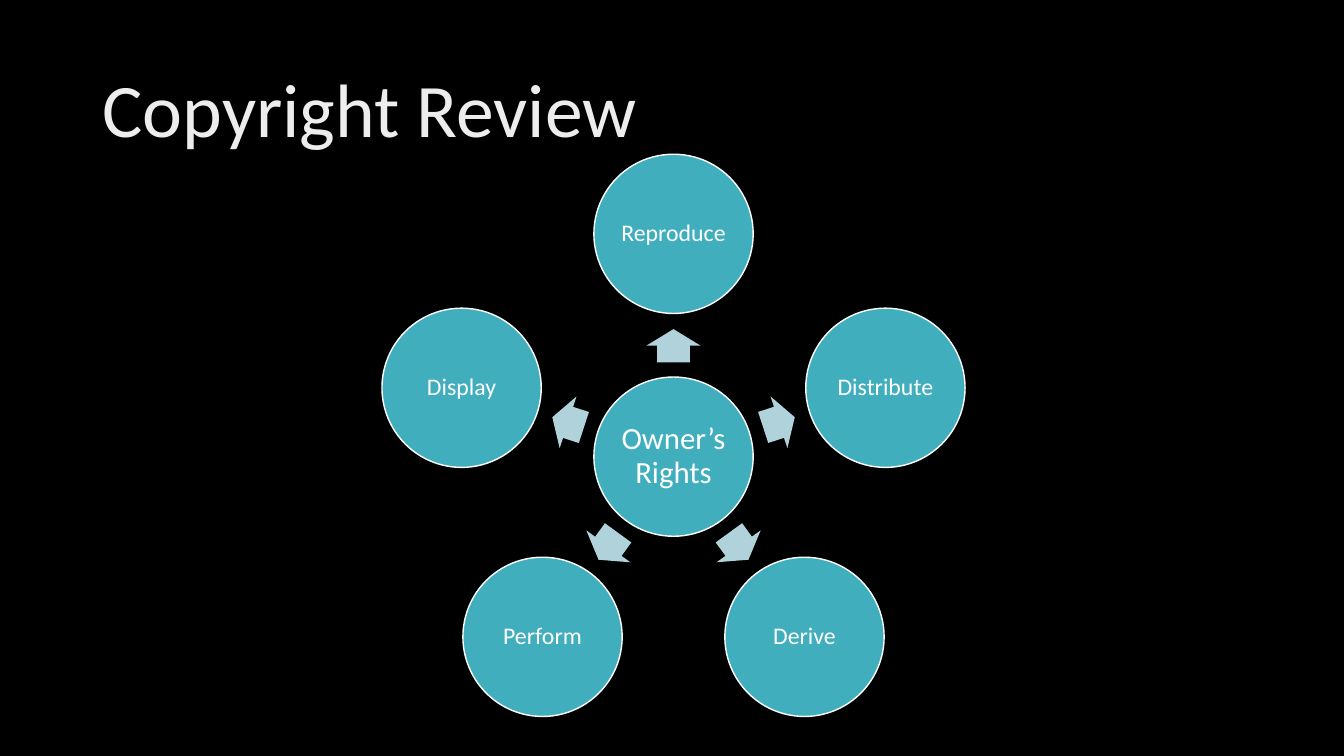
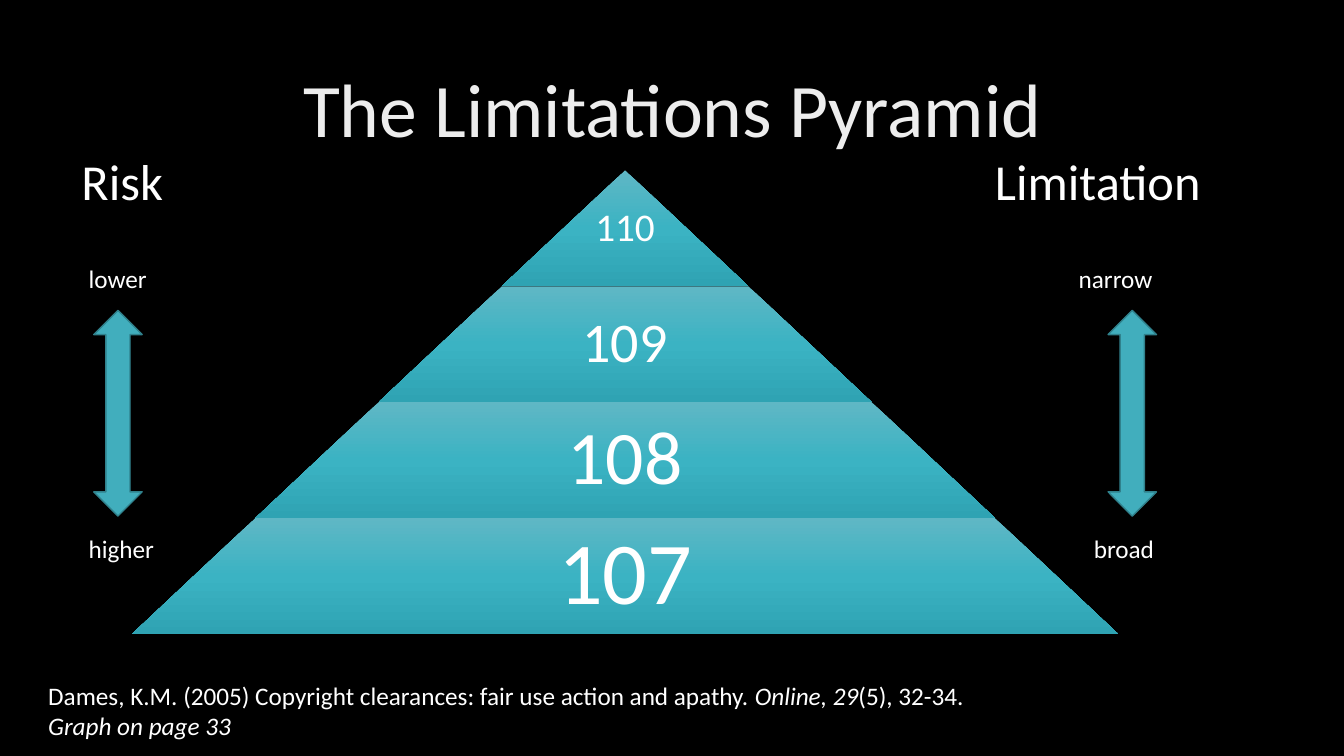
import math

import lxml.etree
import pptx
import pptx.dml.color
import pptx.enum.shapes
import pptx.enum.text
import pptx.oxml
import pptx.oxml.ns
import pptx.util

PX = 9144  # EMU in one px, 100 px to the inch
FONT = "Calibri"
COLORS = {
    "background": "000000",
    "title": "EDEDED",
    "text": "FFFFFF",
    "teal": "41AEBD",
    "teal_edge": "30818C",
    "pale_teal": "B0D3DB",
}
LAYER_GRADIENT = [(0, "5FB7C5"), (50, "3BB3C3"), (100, "2FA3B3")]
SHAPES = pptx.enum.shapes.MSO_SHAPE
ALIGN = pptx.enum.text.PP_ALIGN
ANCHOR = pptx.enum.text.MSO_ANCHOR

# Content: owner's rights
HUB = "Owner’s Rights"
RIGHTS = ["Reproduce", "Distribute", "Derive", "Perform", "Display"]
HUB_CENTER = (668, 453)
CIRCLE_SIZE, ORBIT, ARROW_ORBIT = 158, 221, 110
ARROW_SIZE = (33, 54)

# Content: pyramid layers from the top, with text size
LAYERS = [("110", 28), ("109", 40), ("108", 54), ("107", 63)]
PYRAMID_CENTER, PYRAMID_TOP, PYRAMID_WIDTH, LAYER_HEIGHT = 620, 169, 978, 115

# Content: scales beside the pyramid, each label as (text, left)
SCALES = [
    {"heading": ("Risk", 71, 175), "arrow": 93, "top": ("lower", 78), "bottom": ("higher", 78)},
    {"heading": ("Limitation", 977, 268), "arrow": 1099, "top": ("narrow", 1060), "bottom": ("broad", 1075)},
]
# Paragraphs of (text, italic) runs
CITATION = [
    [
        ("Dames, K.M. (2005) Copyright clearances: fair use action and apathy. ", False),
        ("Online, 29", True),
        ("(5), 32-34.", False),
    ],
    [("Graph on page 33", True)],
]


def rgb(name):
    return pptx.dml.color.RGBColor.from_string(COLORS[name])


def px(*lengths):
    return [pptx.util.Emu(round(length * PX)) for length in lengths]


def write_text(shape, text, size=18, color="text", align=ALIGN.LEFT, anchor=ANCHOR.TOP,
               margins=(10, 5), spacing=1.0):
    """Fill a shape with a string or with paragraphs of (text, italic) runs."""
    frame = shape.text_frame
    frame.word_wrap = True
    frame.vertical_anchor = anchor
    frame.margin_left = frame.margin_right = px(margins[0])[0]
    frame.margin_top = frame.margin_bottom = px(margins[1])[0]
    paragraphs = [[(text, False)]] if isinstance(text, str) else text
    for index, runs in enumerate(paragraphs):
        paragraph = frame.add_paragraph() if index else frame.paragraphs[0]
        paragraph.alignment = align
        paragraph.line_spacing = spacing
        for words, italic in runs:
            run = paragraph.add_run()
            run.text = words
            run.font.name = FONT
            run.font.size = pptx.util.Pt(size)
            run.font.italic = italic
            run.font.color.rgb = rgb(color)


def add_text(slide, box, text, **text_format):
    write_text(slide.shapes.add_textbox(*px(*box)), text, **text_format)


def add_shape(slide, kind, box, fill=None, line=None):
    shape = slide.shapes.add_shape(kind, *px(*box))
    shape.shadow.inherit = False
    if fill:
        shape.fill.solid()
        shape.fill.fore_color.rgb = rgb(fill)
    if line:
        shape.line.color.rgb = rgb(line)
        shape.line.width = pptx.util.Pt(1)
    else:
        shape.line.fill.background()
    return shape


def set_gradient(shape, stops):
    shape.fill.gradient()
    shape.fill.gradient_angle = 270
    stop_list = shape.fill._fill._gradFill.find(pptx.oxml.ns.qn("a:gsLst"))
    for stop in list(stop_list):
        stop_list.remove(stop)
    for position, color in stops:
        stop = lxml.etree.SubElement(stop_list, pptx.oxml.ns.qn("a:gs"), pos=str(position * 1000))
        lxml.etree.SubElement(stop, pptx.oxml.ns.qn("a:srgbClr"), val=color)


def add_slide(presentation, title, align):
    slide = presentation.slides.add_slide(presentation.slide_layouts[6])
    add_text(slide, (92, 40, 1150, 145), title, size=54, color="title",
             align=align, anchor=ANCHOR.MIDDLE, spacing=0.9)
    return slide


def centered_box(center, width, height):
    return center[0] - width / 2, center[1] - height / 2, width, height


def around_hub(angle, distance):
    turn = math.radians(angle)
    return HUB_CENTER[0] + distance * math.cos(turn), HUB_CENTER[1] + distance * math.sin(turn)


def add_circle(slide, center, text, size):
    circle = add_shape(slide, SHAPES.OVAL, centered_box(center, CIRCLE_SIZE, CIRCLE_SIZE),
                       "teal", "text")
    write_text(circle, text, size=size, align=ALIGN.CENTER, anchor=ANCHOR.MIDDLE,
               margins=(2, 2), spacing=0.9)


def build_rights(presentation):
    slide = add_slide(presentation, "Copyright Review", ALIGN.LEFT)
    add_circle(slide, HUB_CENTER, HUB, 22)
    for index, right in enumerate(RIGHTS):
        angle = 360 / len(RIGHTS) * index - 90
        arrow = add_shape(slide, SHAPES.RIGHT_ARROW,
                          centered_box(around_hub(angle, ARROW_ORBIT), *ARROW_SIZE), "pale_teal")
        arrow.adjustments[0] = 0.6
        arrow.rotation = angle % 360
        add_circle(slide, around_hub(angle, ORBIT), right, 17)


def build_pyramid(presentation):
    slide = add_slide(presentation, "The Limitations Pyramid", ALIGN.CENTER)

    # Layers widen by an equal step
    step = PYRAMID_WIDTH / len(LAYERS)
    for index, (number, size) in enumerate(LAYERS):
        width = step * (index + 1)
        box = (PYRAMID_CENTER - width / 2, PYRAMID_TOP + LAYER_HEIGHT * index, width, LAYER_HEIGHT)
        layer = add_shape(slide, SHAPES.TRAPEZOID, box)
        layer.adjustments[0] = step / 2 / LAYER_HEIGHT
        set_gradient(layer, LAYER_GRADIENT)
        add_text(slide, box, number, size=size, align=ALIGN.CENTER, anchor=ANCHOR.MIDDLE,
                 margins=(6, 6), spacing=0.9)

    # Scales on both sides
    for scale in SCALES:
        heading, left, width = scale["heading"]
        add_text(slide, (left, 144, width, 71), heading, size=36)
        add_shape(slide, SHAPES.UP_DOWN_ARROW, (scale["arrow"], 308, 48, 204), "teal", "teal_edge")
        for end, top in (("top", 256), ("bottom", 524)):
            label, left = scale[end]
            add_text(slide, (left, top, 125, 40), label)

    # Citation
    add_text(slide, (38, 670, 1282, 71), CITATION)


def main():
    presentation = pptx.Presentation()
    presentation.slide_width, presentation.slide_height = px(1333, 750)
    background = presentation.slide_master.background.fill
    background.solid()
    background.fore_color.rgb = rgb("background")
    build_rights(presentation)
    build_pyramid(presentation)
    presentation.save("out.pptx")


if __name__ == "__main__":
    main()
